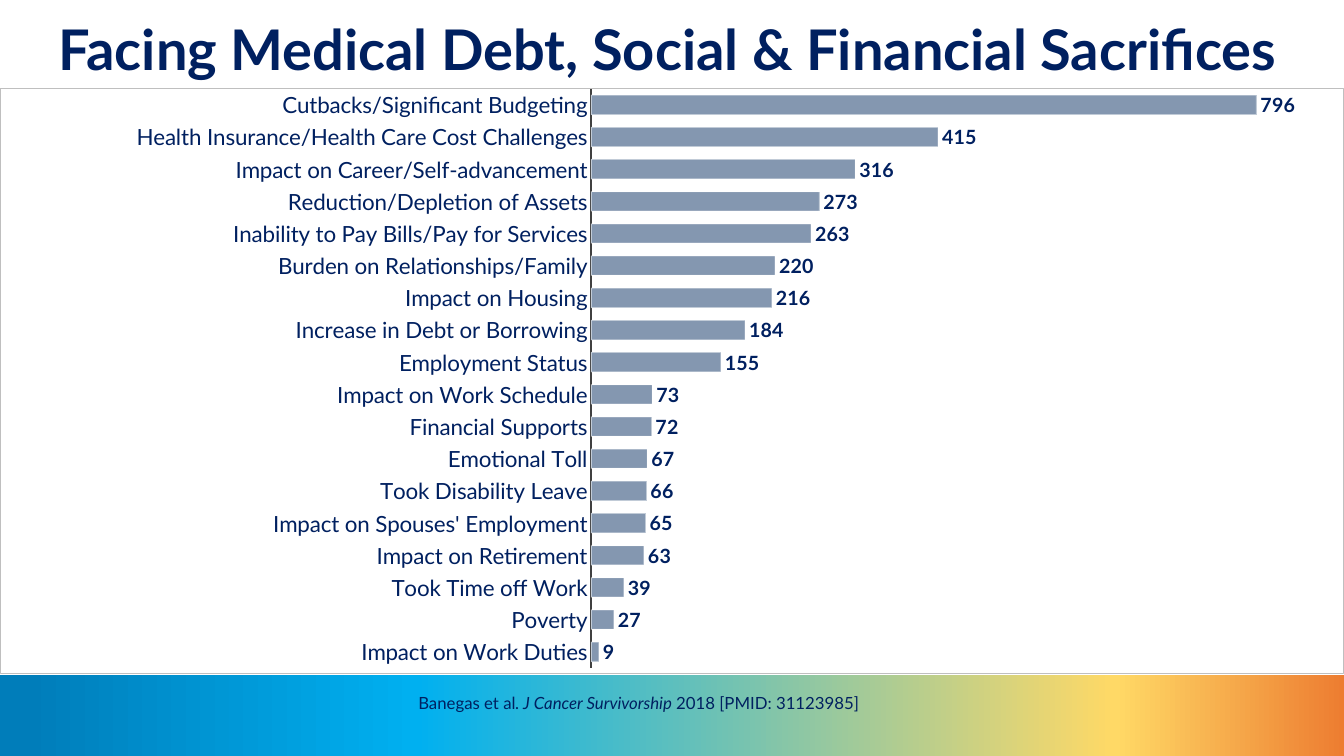
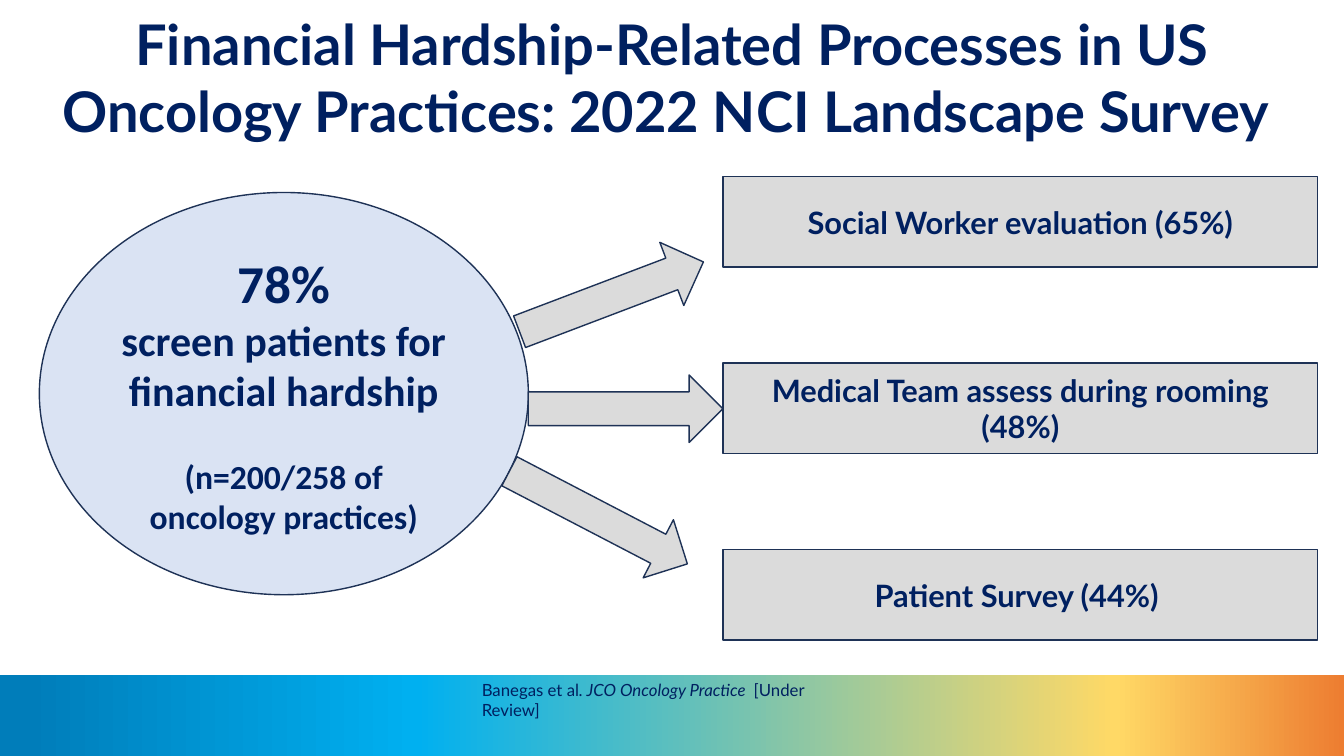
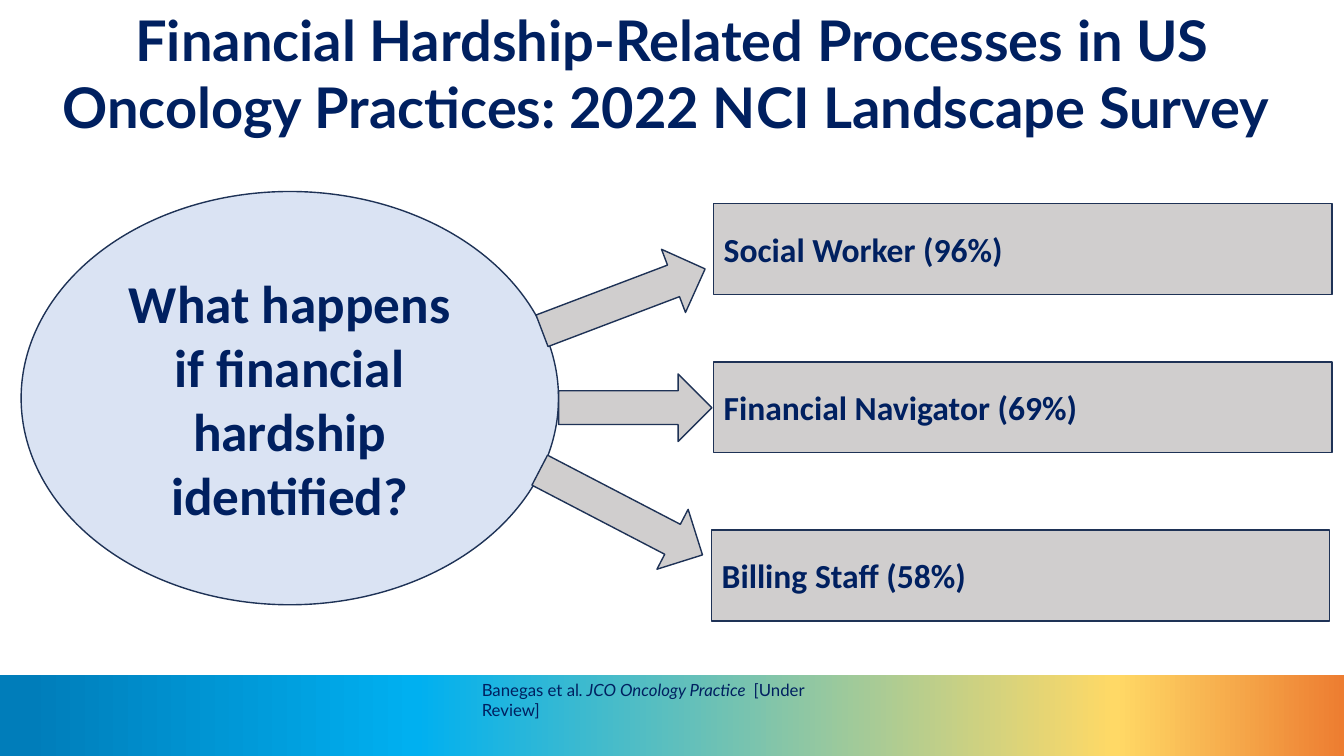
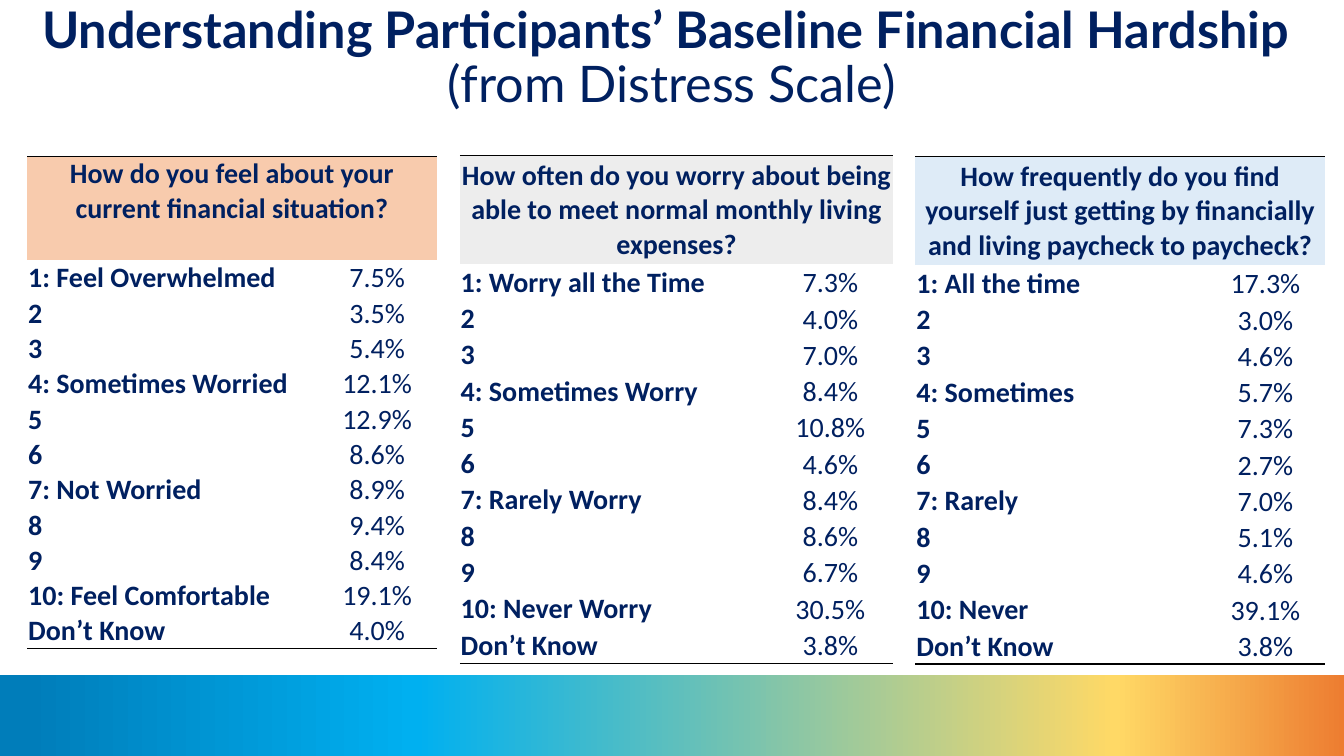
from lxml.etree import SubElement
from pptx import Presentation
from pptx.chart.data import CategoryChartData
from pptx.dml.color import RGBColor
from pptx.enum.chart import XL_CHART_TYPE, XL_LABEL_POSITION, XL_TICK_LABEL_POSITION, XL_TICK_MARK
from pptx.enum.shapes import MSO_SHAPE as SHAPE
from pptx.enum.text import MSO_ANCHOR as ANCHOR, MSO_AUTO_SIZE as AUTO_SIZE, PP_ALIGN as ALIGN
from pptx.oxml import parse_xml
from pptx.oxml.ns import nsdecls, qn
from pptx.util import Inches, Pt

NAVY = RGBColor(0x00, 0x20, 0x60)
OUTLINE = RGBColor(0x1E, 0x32, 0x56)
PALE_BLUE = RGBColor(0xDA, 0xE3, 0xF3)
LIGHT_GREY = RGBColor(0xDB, 0xDB, 0xDB)
WARM_GREY = RGBColor(0xD0, 0xCE, 0xCE)
BAR_BLUE = RGBColor(0x84, 0x97, 0xB0)
AXIS_GREY = RGBColor(0x40, 0x40, 0x40)
FRAME_GREY = RGBColor(0xBF, 0xBF, 0xBF)
PEACH = RGBColor(0xF8, 0xCB, 0xAD)
MIST = RGBColor(0xED, 0xED, 0xED)
ICE = RGBColor(0xDE, 0xEB, 0xF7)
WHITE = RGBColor(0xFF, 0xFF, 0xFF)
BLACK = RGBColor(0x00, 0x00, 0x00)
BAND_STOPS = [
    (2, RGBColor(0x00, 0x7D, 0xBA)),
    (31, RGBColor(0x00, 0xB0, 0xF0)),
    (83, RGBColor(0xFF, 0xD9, 0x66)),
    (100, RGBColor(0xED, 0x7D, 0x31)),
]

LATO, CALIBRI = "Lato", "Calibri"
WIDTH, HEIGHT = 13.33, 7.5
BAND_TOP = 6.7
NO_TABLE_STYLE = "{2D5ABB26-0587-4C30-8999-92F81FD0307C}"
SURVEY_TITLE = "Financial Hardship-Related Processes in US Oncology Practices: 2022 NCI Landscape Survey "

SACRIFICES = [
    ("Cutbacks/Significant Budgeting", 796),
    ("Health Insurance/Health Care Cost Challenges", 415),
    ("Impact on Career/Self-advancement", 316),
    ("Reduction/Depletion of Assets", 273),
    ("Inability to Pay Bills/Pay for Services", 263),
    ("Burden on Relationships/Family", 220),
    ("Impact on Housing", 216),
    ("Increase in Debt or Borrowing", 184),
    ("Employment Status", 155),
    ("Impact on Work Schedule", 73),
    ("Financial Supports", 72),
    ("Emotional Toll", 67),
    ("Took Disability Leave", 66),
    ("Impact on Spouses' Employment", 65),
    ("Impact on Retirement", 63),
    ("Took Time off Work", 39),
    ("Poverty", 27),
    ("Impact on Work Duties", 9),
]


def inches(box):
    return [Inches(length) for length in box]


def set_font(font, size, name=LATO, bold=False):
    font.size, font.name, font.bold = Pt(size), name, bold
    font.color.rgb = NAVY


def add_run(paragraph, text, size, name=LATO, bold=True, italic=False):
    run = paragraph.add_run()
    run.text = text
    set_font(run.font, size, name, bold)
    run.font.italic = italic


def add_band(slide, layout):
    """Draw the gradient band and move it to the layout that all slides use."""
    band = slide.shapes.add_shape(SHAPE.RECTANGLE, *inches((0, BAND_TOP, WIDTH, HEIGHT - BAND_TOP)))
    band.shadow.inherit = False
    band.line.fill.background()
    band.fill.gradient()
    band.fill.gradient_angle = 0
    stops = band.element.spPr.find(qn("a:gradFill")).find(qn("a:gsLst"))
    for stop in list(stops):
        stops.remove(stop)
    for position, color in BAND_STOPS:
        stop = SubElement(stops, qn("a:gs"), pos=str(position * 1000))
        SubElement(stop, qn("a:srgbClr"), val=str(color))
    band.element.nvSpPr.cNvPr.id = 20
    layout.shapes.element.insert(2, band.element)


def add_title(slide, box, text, size, spacing=1.0, subtitle=None):
    title = slide.shapes.title
    title.left, title.top, title.width, title.height = inches(box)
    frame = title.text_frame
    frame.word_wrap = True
    frame.auto_size = AUTO_SIZE.NONE
    frame.vertical_anchor = ANCHOR.MIDDLE
    paragraph = frame.paragraphs[0]
    paragraph.alignment = ALIGN.CENTER
    paragraph.line_spacing = spacing
    add_run(paragraph, text, size)
    if subtitle:
        paragraph.add_line_break()
        add_run(paragraph, subtitle, size, bold=False)


def add_citation(slide, box, journal, ending):
    frame = slide.shapes.add_textbox(*inches(box)).text_frame
    frame.word_wrap = True
    frame.auto_size = AUTO_SIZE.SHAPE_TO_FIT_TEXT
    frame.vertical_anchor = ANCHOR.MIDDLE
    paragraph = frame.paragraphs[0]
    add_run(paragraph, "Banegas et al", 12, bold=False)
    add_run(paragraph, journal, 12, bold=False, italic=True)
    add_run(paragraph, ending, 12, bold=False)


def add_outlined(slide, preset, box, fill, lines=(), font=CALIBRI, alignment=ALIGN.CENTER):
    """Add an outlined shape; each line is (text, size, space before)."""
    shape = slide.shapes.add_shape(preset, *inches(box))
    shape.shadow.inherit = False
    shape.fill.solid()
    shape.fill.fore_color.rgb = fill
    shape.line.color.rgb = OUTLINE
    shape.line.width = Pt(1)
    frame = shape.text_frame
    frame.word_wrap = True
    frame.vertical_anchor = ANCHOR.MIDDLE
    for index, (text, size, space_before) in enumerate(lines):
        paragraph = frame.add_paragraph() if index else frame.paragraphs[0]
        paragraph.alignment = alignment
        if space_before:
            paragraph.space_before = Pt(space_before)
        add_run(paragraph, text, size, font)
    return shape


def add_bar_chart(slide, box, rows):
    data = CategoryChartData()
    data.categories = [label for label, _ in reversed(rows)]
    data.add_series("Series 1", [value for _, value in reversed(rows)])
    chart = slide.shapes.add_chart(XL_CHART_TYPE.BAR_CLUSTERED, *inches(box), data).chart
    chart.has_title = chart.has_legend = False
    set_font(chart.font, 10)

    plot = chart.plots[0]
    plot.gap_width = 65
    plot.vary_by_categories = False
    plot.has_data_labels = True
    labels = plot.data_labels
    labels.show_value = True
    labels.position = XL_LABEL_POSITION.OUTSIDE_END
    set_font(labels.font, 14, bold=True)

    bars = plot.series[0].format
    bars.fill.solid()
    bars.fill.fore_color.rgb = BAR_BLUE
    bars.line.color.rgb = WHITE
    bars.line.width = Pt(0.75)
    line_color = plot.series[0].format.line._ln.find(".//" + qn("a:srgbClr"))
    SubElement(line_color, qn("a:alpha"), val="50000")

    category_axis, value_axis = chart.category_axis, chart.value_axis
    for axis, size in ((category_axis, 16), (value_axis, 12)):
        axis.has_major_gridlines = False
        axis.major_tick_mark = axis.minor_tick_mark = XL_TICK_MARK.NONE
        set_font(axis.tick_labels.font, size)
    category_axis.format.line.color.rgb = AXIS_GREY
    category_axis.format.line.width = Pt(1.5)
    value_axis.format.line.fill.background()
    value_axis.tick_label_position = XL_TICK_LABEL_POSITION.NONE
    value_axis.minimum_scale, value_axis.maximum_scale = 0, 900

    chart_element = chart.element.find(qn("c:chart"))
    chart_element.addnext(parse_xml(
        f'<c:spPr {nsdecls("c", "a")}><a:solidFill><a:srgbClr val="{WHITE}"/></a:solidFill>'
        f'<a:ln w="{Pt(0.75)}"><a:solidFill><a:srgbClr val="{FRAME_GREY}"/></a:solidFill></a:ln></c:spPr>'))
    plot_area = chart_element.find(qn("c:plotArea"))
    for layout in plot_area.findall(qn("c:layout")):
        plot_area.remove(layout)
    layout = SubElement(plot_area, qn("c:layout"))
    plot_area.insert(0, layout)
    manual = SubElement(layout, qn("c:manualLayout"))
    for tag, value in (("layoutTarget", "inner"), ("xMode", "edge"), ("yMode", "edge"),
                       ("x", "0.44"), ("y", "0"), ("w", "0.56"), ("h", "0.99")):
        SubElement(manual, qn("c:" + tag), val=value)


def add_border(cell, side, points):
    line = parse_xml(f'<a:ln{side} {nsdecls("a")} w="{Pt(points)}"><a:solidFill>'
                     f'<a:srgbClr val="{BLACK}"/></a:solidFill></a:ln{side}>')
    cell._tc.get_or_add_tcPr().insert(0, line)


def fill_cell(cell, text, bold, alignment, anchor, color=None):
    cell.margin_left = cell.margin_top = cell.margin_right = Inches(0.01)
    cell.margin_bottom = 0
    cell.vertical_anchor = anchor
    if color:
        cell.fill.solid()
        cell.fill.fore_color.rgb = color
    else:
        cell.fill.background()
    paragraph = cell.text_frame.paragraphs[0]
    paragraph.alignment = alignment
    add_run(paragraph, text, 20, CALIBRI, bold)


def add_answer_table(slide, box, heights, question, color, named, percents,
                     header_anchor=ANCHOR.MIDDLE, bottom_line=1):
    """Table of a 1-10 scale; named gives wording for some of its points."""
    labels = [f"{point}: {named[point]}" if point in named else str(point) for point in range(1, 11)]
    labels.append("Don’t Know")
    frame = slide.shapes.add_table(len(labels) + 1, 2, *inches(box))
    table = frame.table
    table.first_row = table.horz_banding = False
    frame.element.find(".//" + qn("a:tableStyleId")).text = NO_TABLE_STYLE
    for column, share in zip(table.columns, (0.71, 0.29)):
        column.width = Inches(box[2] * share)
    header_height, row_height = heights
    for index, row in enumerate(table.rows):
        row.height = Inches(row_height if index else header_height)

    header = table.cell(0, 0)
    header.merge(table.cell(0, 1))
    fill_cell(header, question, True, ALIGN.CENTER, header_anchor, color)
    for index, (label, percent) in enumerate(zip(labels, percents), start=1):
        fill_cell(table.cell(index, 0), label, True, ALIGN.LEFT, ANCHOR.MIDDLE)
        fill_cell(table.cell(index, 1), f"{percent}%", False, ALIGN.CENTER, ANCHOR.BOTTOM)
    for column in range(2):
        add_border(table.cell(0, column), "T", 0.5)
        add_border(table.cell(len(labels), column), "B", bottom_line)


def build_survey_slide(slide, title_top, hub, hub_lines, arrows, targets, target_size,
                       color, size, font, alignment):
    """Ellipse with arrows (box, rotation) to boxes (left, top, text)."""
    add_title(slide, (0, title_top, WIDTH, 1.1), SURVEY_TITLE, 40)
    add_outlined(slide, SHAPE.OVAL, hub, PALE_BLUE, hub_lines)
    for box, rotation in arrows:
        add_outlined(slide, SHAPE.RIGHT_ARROW, box, color).rotation = rotation
    for left, top, text in targets:
        add_outlined(slide, SHAPE.RECTANGLE, (left, top, *target_size), color,
                     [(text, size, 0)], font, alignment)
    add_citation(slide, (4.68, 6.79, 3.98, 0.3), ". JCO Oncology Practice  ", "[Under Review]")


def build_debt_slide(slide):
    add_title(slide, (0.12, 0, 13, 1.03), "Facing Medical Debt, Social & Financial Sacrifices", 40, 0.9)
    add_bar_chart(slide, (0, 0.87, WIDTH, 5.82), SACRIFICES)
    add_citation(slide, (4.05, 6.82, 5.51, 0.3), ". J Cancer Survivorship ", "2018 [PMID: 31123985]")


def build_screening_slide(slide):
    targets = ["Social Worker evaluation (65%)", "Medical Team assess during rooming (48%)",
               "Patient Survey (44%) "]
    build_survey_slide(
        slide, 0.21, (0.39, 1.91, 4.85, 3.99),
        [("78%", 38, 0), ("screen patients for financial hardship", 30, 0),
         ("(n=200/258 of oncology practices)", 24, 29)],
        [((5.09, 2.61, 1.95, 0.67), 339.2), ((4.94, 4.81, 1.99, 0.65), 27.5),
         ((5.24, 3.72, 1.93, 0.67), 0)],
        [(7.17, 1.75 + 1.85 * index, text) for index, text in enumerate(targets)],
        (5.9, 0.9), LIGHT_GREY, 22, LATO, ALIGN.CENTER)


def build_response_slide(slide):
    build_survey_slide(
        slide, 0.17, (0.21, 1.9, 5.33, 4.1),
        [("What happens if financial hardship identified?", 38, 0)],
        [((5.32, 2.64, 1.73, 0.67), 339.2), ((5.25, 4.75, 1.82, 0.67), 27.5),
         ((5.54, 3.71, 1.52, 0.67), 0)],
        [(7.08, 2.02, "Social Worker (96%)"), (7.08, 3.59, "Financial Navigator (69%)"),
         (7.06, 5.26, "Billing Staff (58%)")],
        (6.13, 0.9), WARM_GREY, 24, CALIBRI, ALIGN.LEFT)


def build_baseline_slide(slide):
    add_title(slide, (0, 0, WIDTH, 1.18), "Understanding Participants’ Baseline Financial Hardship ",
              36, 0.9, "(from Distress Scale)")
    add_answer_table(
        slide, (0.27, 1.55, 4.06, 4.74), (1.03, 0.34),
        "How do you feel about your current financial situation?", PEACH,
        {1: "Feel Overwhelmed", 4: "Sometimes Worried", 7: "Not Worried", 10: "Feel Comfortable"},
        [7.5, 3.5, 5.4, 12.1, 12.9, 8.6, 8.9, 9.4, 8.4, 19.1, 4.0], ANCHOR.TOP, 0.5)
    add_answer_table(
        slide, (4.56, 1.54, 4.3, 5.08), (1.08, 0.36),
        "How often do you worry about being able to meet normal monthly living expenses?", MIST,
        {1: "Worry all the Time", 4: "Sometimes Worry", 7: "Rarely Worry", 10: "Never Worry"},
        [7.3, 4.0, 7.0, 8.4, 10.8, 4.6, 8.4, 8.6, 6.7, 30.5, 3.8])
    add_answer_table(
        slide, (9.08, 1.55, 4.06, 5.07), (1.08, 0.36),
        "How frequently do you find yourself just getting by financially and living paycheck to paycheck?",
        ICE, {1: "All the time", 4: "Sometimes", 7: "Rarely", 10: "Never"},
        [17.3, 3.0, 4.6, 5.7, 7.3, 2.7, 7.0, 5.1, 4.6, 39.1, 3.8])


def main():
    presentation = Presentation()
    presentation.slide_width, presentation.slide_height = inches((WIDTH, HEIGHT))
    layout = presentation.slide_layouts.get_by_name("Title Only")
    builders = (build_debt_slide, build_screening_slide, build_response_slide, build_baseline_slide)
    for index, build in enumerate(builders):
        slide = presentation.slides.add_slide(layout)
        if index == 0:
            add_band(slide, layout)
        build(slide)
    presentation.save("out.pptx")


if __name__ == "__main__":
    main()
